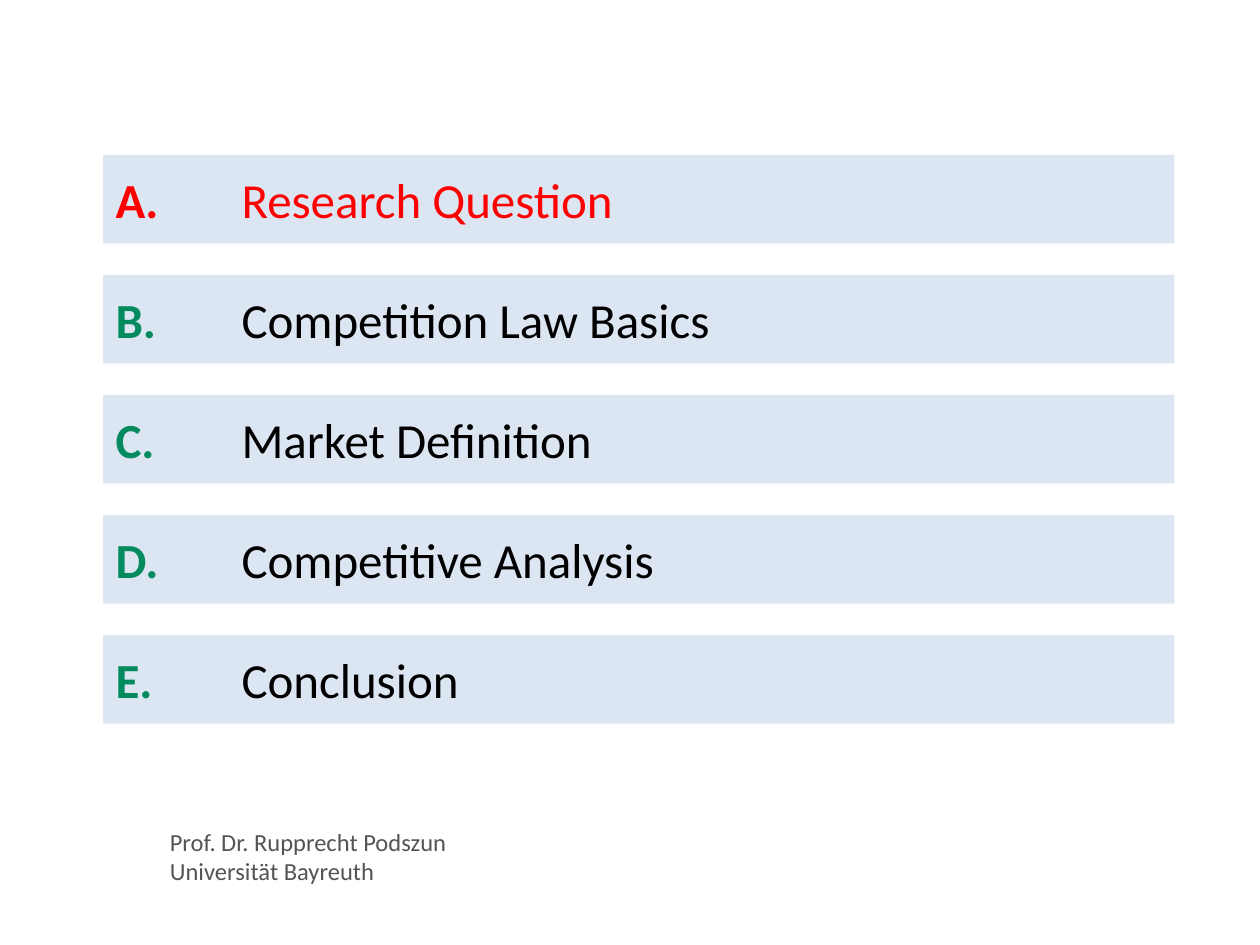
from dataclasses import dataclass

from lxml import etree
from pptx import Presentation
from pptx.dml.color import RGBColor as Rgb
from pptx.enum import shapes, text
from pptx.oxml.ns import qn
from pptx.util import Pt


@dataclass(frozen=True)
class Theme:
    font: str = "Calibri"
    band: str = "DCE6F2"
    mark: str = "038A5E"
    ink: str = "000000"
    active: str = "FF0000"
    muted: str = "545454"
    item: int = 28
    note: int = 14


THEME = Theme()
TOPICS = ["Research Question", "Competition Law Basics", "Market Definition",
          "Competitive Analysis", "Conclusion"]
CURRENT = 0


def style(run, size, color, bold=False):
    font = run.font
    font.name, font.size, font.bold = THEME.font, Pt(size), bold
    font.color.rgb = Rgb.from_string(color)


def add_tab(para, pos):
    stops = etree.SubElement(para._p.get_or_add_pPr(), qn("a:tabLst"))
    etree.SubElement(stops, qn("a:tab"), pos=str(Pt(pos)), algn="l")


def add_band(slide, box, letter, topic, active):
    band = slide.shapes.add_shape(shapes.MSO_SHAPE.RECTANGLE, *map(Pt, box))
    band.shadow.inherit = False
    band.fill.solid()
    band.fill.fore_color.rgb = Rgb.from_string(THEME.band)
    band.line.fill.background()
    frame = band.text_frame
    frame.word_wrap = True
    frame.vertical_anchor = text.MSO_ANCHOR.MIDDLE
    para = frame.paragraphs[0]
    add_tab(para, 72)
    para.alignment = text.PP_ALIGN.LEFT
    mark, name = para.add_run(), para.add_run()
    mark.text, name.text = f"{letter}. \t", topic
    style(mark, THEME.item, THEME.active if active else THEME.mark, True)
    style(name, THEME.item, THEME.active if active else THEME.ink)


def add_agenda(slide, box, gap):
    """Stack one lettered band per topic, evenly, to fill the box."""
    left, top, width, height = box
    count = len(TOPICS)
    tall = (height - gap * (count - 1)) / count
    for i, topic in enumerate(TOPICS):
        place = (left, top + i * (tall + gap), width, tall)
        add_band(slide, place, "ABCDE"[i], topic, i == CURRENT)


def add_footer(slide, box):
    frame = slide.shapes.add_textbox(*map(Pt, box)).text_frame
    frame.word_wrap = True
    frame.text = "Prof. Dr. Rupprecht Podszun\nUniversität Bayreuth"
    for para in frame.paragraphs:
        style(para.runs[0], THEME.note, THEME.muted)


def main():
    deck = Presentation()
    deck.slide_width, deck.slide_height = Pt(720), Pt(540)
    slide = deck.slides.add_slide(deck.slide_layouts[6])
    add_footer(slide, (90, 469, 590, 41))
    add_agenda(slide, (59, 88.5, 612, 325), gap=18)
    deck.save("out.pptx")


if __name__ == "__main__":
    main()
